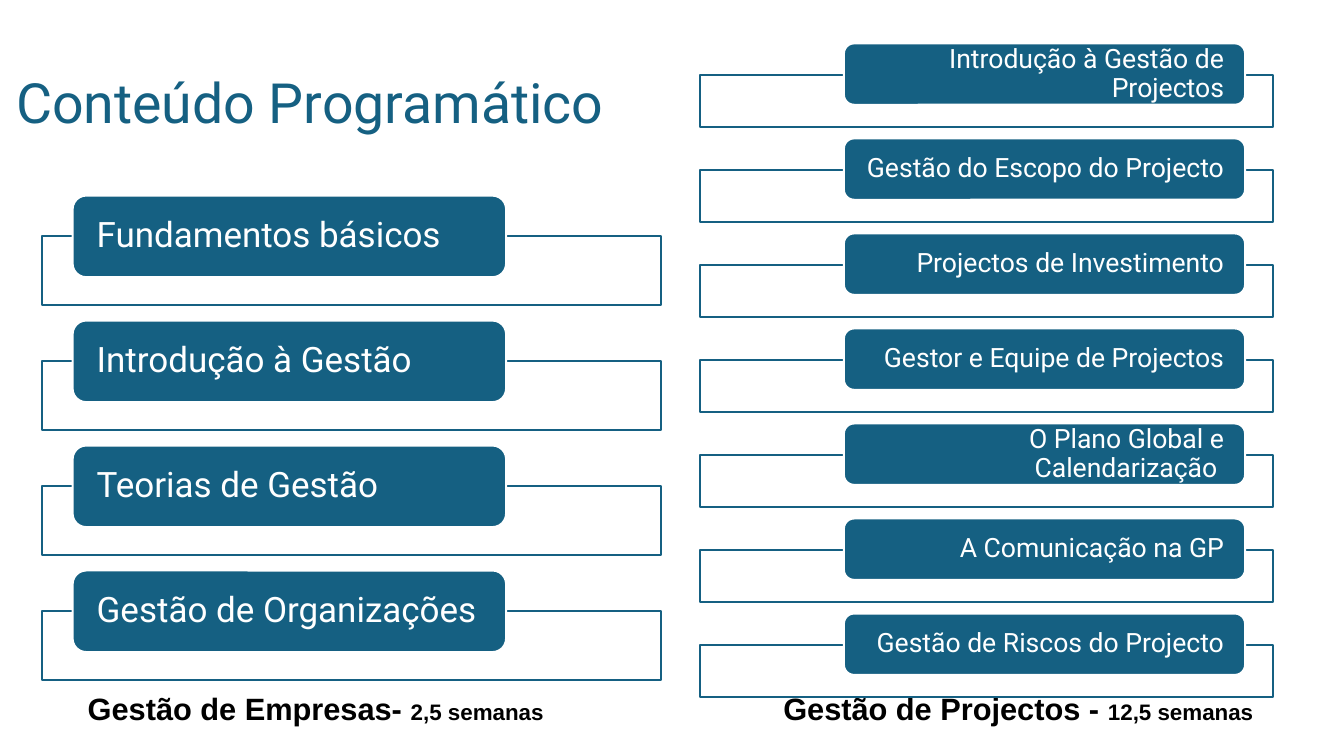
from dataclasses import dataclass

import pptx
import pptx.dml.color
import pptx.enum.shapes
import pptx.enum.text
import pptx.oxml
import pptx.oxml.ns
import pptx.util

ALIGN = pptx.enum.text.PP_ALIGN
ANCHOR = pptx.enum.text.MSO_ANCHOR
SHAPE = pptx.enum.shapes.MSO_SHAPE


@dataclass(frozen=True)
class Theme:
    teal: str = "156082"
    white: str = "FFFFFF"
    black: str = "000000"
    main: str = "Roboto"
    label: str = "Arial"
    title: float = 39.6
    large: float = 22
    small: float = 16
    line: float = 1.5


@dataclass(frozen=True)
class Box:
    """Left, top, width and height in percent of the slide's size."""
    left: float
    top: float
    width: float
    height: float

    def down(self, gap: float) -> "Box":
        return Box(self.left, self.top + gap, self.width, self.height)


@dataclass(frozen=True)
class Run:
    text: str
    size: float
    font: str
    color: str
    bold: bool = False


@dataclass(frozen=True)
class Stack:
    frame: Box
    tab: Box
    step: float
    size: float
    inset: float
    align: ALIGN
    topics: tuple[str, ...]


THEME = Theme()
WIDE, HIGH = pptx.util.Inches(13.333), pptx.util.Inches(7.5)

TITLE = Box(0.45, 5.87, 47.85, 16.13)
LABELS = {
    1: (Box(5.78, 91.07, 42.53, 6.67), "Gestão de Empresas- ", "2,5 semanas"),
    3: (Box(57.53, 91.07, 42.53, 6.4), "Gestão de Projectos - ", "12,5 semanas"),
}
STACKS = (
    Stack(Box(3.15, 31.2, 46.06, 9.2), Box(5.4, 25.87, 32.26, 10.8),
          16.53, 25, 1.5, ALIGN.LEFT,
          ("Fundamentos básicos", "Introdução à Gestão",
           "Teorias de Gestão", "Gestão de Organizações")),
    Stack(Box(52.06, 9.87, 42.68, 6.93), Box(62.79, 5.73, 29.86, 8.13),
          12.57, 19, 1.35, ALIGN.RIGHT,
          ("Introdução à Gestão de Projectos", "Gestão do Escopo do Projecto",
           "Projectos de Investimento", "Gestor e Equipe de Projectos",
           "O Plano Global e Calendarização ", "A Comunicação na GP",
           "Gestão de Riscos do Projecto")),
)


def tint(code: str) -> pptx.dml.color.RGBColor:
    return pptx.dml.color.RGBColor.from_string(code)


def across(share: float) -> int:
    return round(WIDE * share / 100)


def along(share: float) -> int:
    return round(HIGH * share / 100)


def place(box: Box) -> tuple[int, int, int, int]:
    return across(box.left), along(box.top), across(box.width), along(box.height)


def write(shape, runs: list[Run], align: ALIGN, anchor: ANCHOR, before: float = 0) -> None:
    frame = shape.text_frame
    frame.word_wrap = True
    frame.auto_size = pptx.enum.text.MSO_AUTO_SIZE.NONE
    frame.vertical_anchor = anchor
    para = frame.paragraphs[0]
    para.alignment = align
    para.line_spacing = 0.9
    para.space_before = pptx.util.Pt(before)
    for part in runs:
        run = para.add_run()
        run.text = part.text
        run.font.size = pptx.util.Pt(part.size)
        run.font.name = part.font
        run.font.bold = part.bold
        run.font.color.rgb = tint(part.color)


def move(shape, box: Box) -> None:
    shape.left, shape.top, shape.width, shape.height = place(box)


def block(slide, kind: SHAPE, box: Box, fill: str, line: str):
    shape = slide.shapes.add_shape(kind, *place(box))
    shape.shadow.inherit = False
    shape.fill.solid()
    shape.fill.fore_color.rgb = tint(fill)
    shape.line.color.rgb = tint(line)
    shape.line.width = pptx.util.Pt(THEME.line)
    return shape


def fade(shape, share: int) -> None:
    code = shape.fill._xPr.find(".//" + pptx.oxml.ns.qn("a:srgbClr"))
    alpha = pptx.oxml.parse_xml(
        f'<a:alpha {pptx.oxml.ns.nsdecls("a")} val="{share * 1000}"/>')
    code.append(alpha)


def draw(slide, stack: Stack) -> None:
    for row, topic in enumerate(stack.topics):
        gap = row * stack.step
        frame = block(slide, SHAPE.RECTANGLE, stack.frame.down(gap), THEME.white, THEME.teal)
        fade(frame, 90)
        tab = block(slide, SHAPE.ROUNDED_RECTANGLE, stack.tab.down(gap), THEME.teal, THEME.white)
        text = tab.text_frame
        text.margin_left = text.margin_right = across(stack.inset)
        text.margin_top = text.margin_bottom = 0
        write(tab, [Run(topic, stack.size, THEME.main, THEME.white)], stack.align, ANCHOR.MIDDLE)


def main() -> None:
    deck = pptx.Presentation()
    deck.slide_width, deck.slide_height = WIDE, HIGH
    slide = deck.slides.add_slide(deck.slide_layouts.get_by_name("Comparison"))

    # Title and the two labels at the foot
    head = slide.shapes.title
    move(head, TITLE)
    write(head, [Run("Conteúdo Programático", THEME.title, THEME.main, THEME.teal)],
          ALIGN.LEFT, ANCHOR.MIDDLE)
    for holder in list(slide.placeholders):
        index = holder.placeholder_format.idx
        if index in LABELS:
            box, name, weeks = LABELS[index]
            move(holder, box)
            write(holder, [Run(name, THEME.large, THEME.label, THEME.black, True),
                           Run(weeks, THEME.small, THEME.label, THEME.black, True)],
                  ALIGN.LEFT, ANCHOR.TOP, before=10)
        elif index:
            holder.element.getparent().remove(holder.element)

    # Topic stacks
    for stack in STACKS:
        draw(slide, stack)

    deck.save("out.pptx")


if __name__ == "__main__":
    main()
